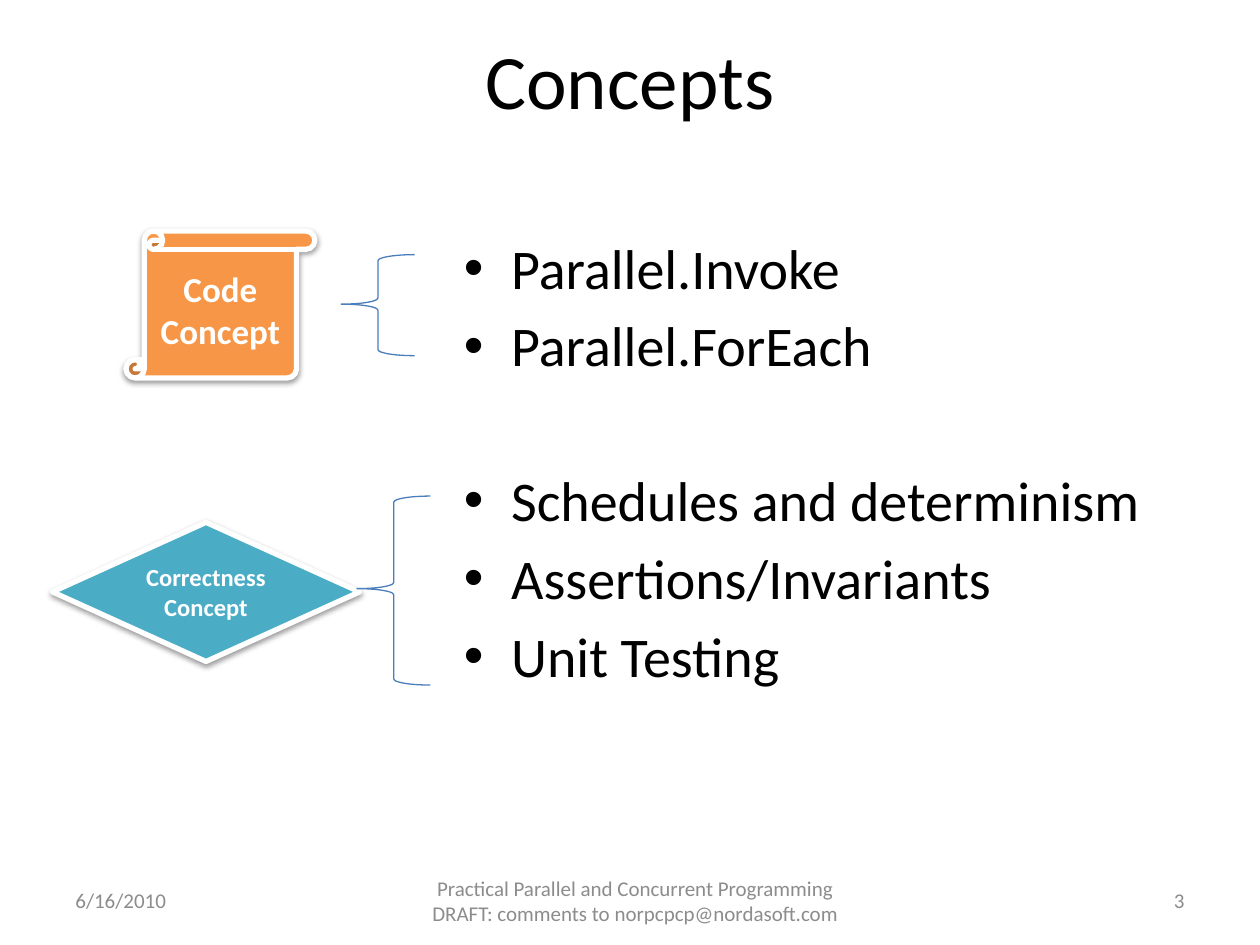
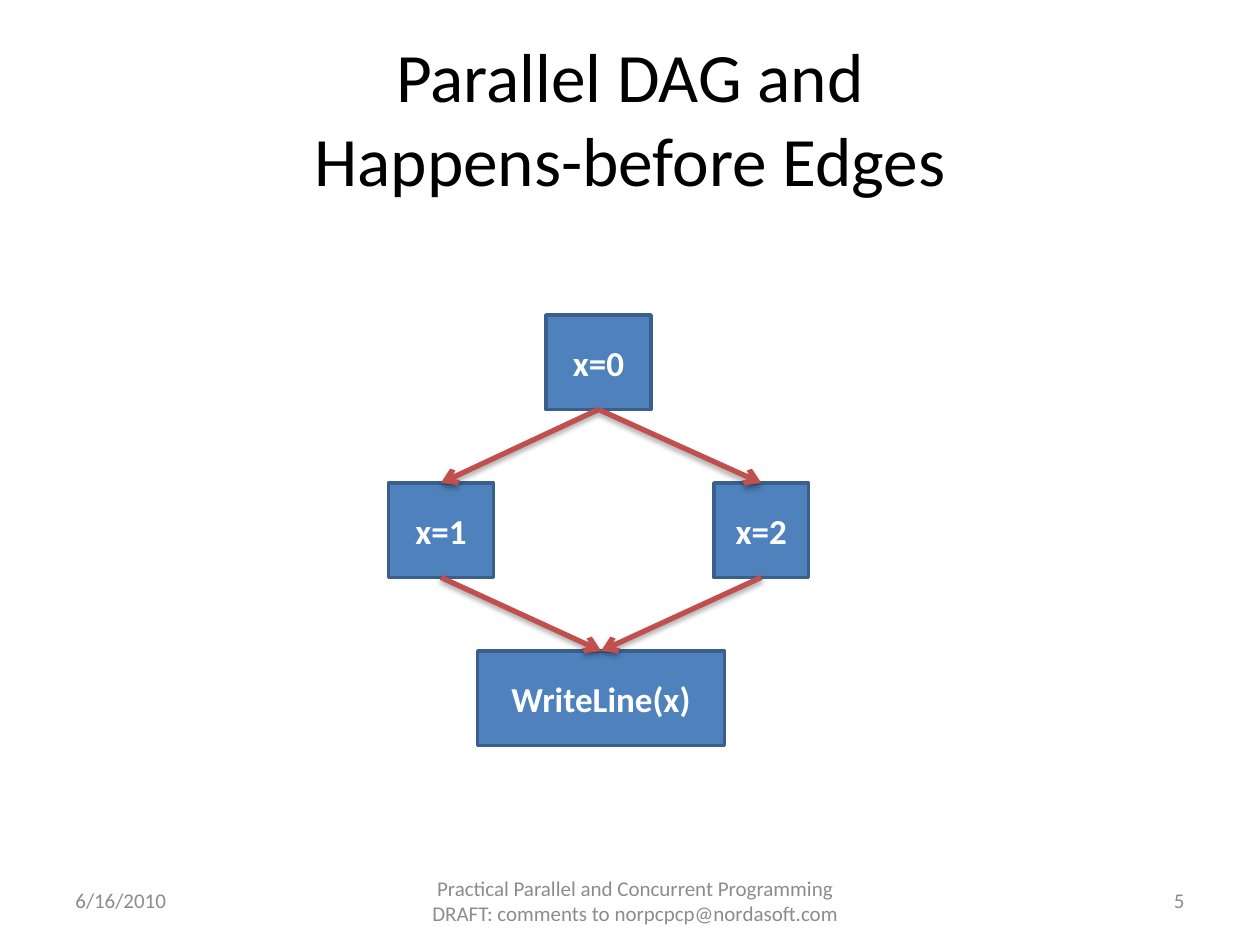
import pptx
import pptx.dml.color
import pptx.enum.shapes
import pptx.enum.text
import pptx.oxml
import pptx.oxml.ns
import pptx.util

PX = 9525  # EMU in one px, 96 px to the inch
SHAPE = pptx.enum.shapes.MSO_SHAPE
ALIGN = pptx.enum.text.PP_ALIGN
ANCHOR = pptx.enum.text.MSO_ANCHOR
NS = pptx.oxml.ns.nsdecls("a")

BLACK, WHITE, GREY = "000000", "FFFFFF", "8C8C8C"
ORANGE, TEAL, BLUE = "F79646", "4BACC6", "4F81BD"
BOX_EDGE, BRACE_LINE, ARROW_RED = "3A5F8C", "4B7EBC", "C0504D"


def rgb(value):
    return pptx.dml.color.RGBColor.from_string(value)


def write(sp, lines, size, color, align=ALIGN.CENTER, anchor=ANCHOR.MIDDLE, bold=False):
    """Fill sp with one paragraph per line and return the paragraphs."""
    tf = sp.text_frame
    tf.word_wrap = True
    tf.vertical_anchor = anchor
    tf.text = "\n".join(lines)
    font = {"name": "Calibri", "size": pptx.util.Pt(size), "bold": bold}
    for p in tf.paragraphs:
        p.alignment = align
        for r in p.runs:
            r.font.color.rgb = rgb(color)
            for key, value in font.items():
                setattr(r.font, key, value)
    return tf.paragraphs


prs = pptx.Presentation()
prs.slide_width, prs.slide_height = 960 * PX, 720 * PX

# Titles and footers
FOOTER = ("Practical Parallel and Concurrent Programming "
          "DRAFT: comments to norpcpcp@nordasoft.com")
pages = [
    ("Concepts", 0, 44, "3"),
    ("Parallel DAG and\vHappens-before Edges", 29, 39.6, "5"),
]
slides = []
for title, top, size, number in pages:
    s = prs.slides.add_slide(prs.slide_layouts[6])
    slides.append(s)
    sp = s.shapes.add_textbox(48 * PX, top * PX, 864 * PX, 120 * PX)
    write(sp, [title], size, BLACK)
    for text, left, width, align in [
        ("6/16/2010", 48, 224, ALIGN.LEFT),
        (FOOTER, 304, 360, ALIGN.CENTER),
        (number, 688, 224, ALIGN.RIGHT),
    ]:
        sp = s.shapes.add_textbox(left * PX, 667 * PX, width * PX, 38 * PX)
        write(sp, [text], 12, GREY, align)
concepts, dag = slides
shadowed = []  # (shape, shadow distance in EMU, opacity in percent)

# Concepts: bullet list, with a wider gap before the second group
bullets = [
    ("Parallel.Invoke", 2),
    ("Parallel.ForEach", 6),
    ("Schedules and determinism", 50),
    ("Assertions/Invariants", 6),
    ("Unit Testing", 6),
]
sp = concepts.shapes.add_textbox(344 * PX, 173 * PX, 616 * PX, 475 * PX)
paragraphs = write(sp, [text for text, _ in bullets], 32, BLACK, ALIGN.LEFT, ANCHOR.TOP)
for p, (_, gap) in zip(paragraphs, bullets):
    p.space_before = pptx.util.Pt(gap)
    pPr = p._p.get_or_add_pPr()
    pPr.set("marL", str(36 * PX))
    pPr.set("indent", str(-36 * PX))
    for xml in (f'<a:buFont {NS} typeface="Arial"/>', f'<a:buChar {NS} char="•"/>'):
        pPr.append(pptx.oxml.parse_xml(xml))

# Concepts: badges and the braces that tie them to the list
for kind, box, fill, lines, size in [
    (SHAPE.VERTICAL_SCROLL, (96, 176, 144, 112), ORANGE, ["Code", "Concept"], 20),
    (SHAPE.FLOWCHART_DECISION, (40, 398, 234, 106), TEAL, ["Correctness", "Concept"], 14),
]:
    sp = concepts.shapes.add_shape(kind, *[v * PX for v in box])
    sp.fill.solid()
    sp.fill.fore_color.rgb = rgb(fill)
    sp.line.color.rgb = rgb(WHITE)
    sp.line.width = pptx.util.Pt(3)
    write(sp, lines, size, WHITE, bold=True)
    shadowed.append((sp, 20000, 38))

for box in [(260, 194, 56, 77), (272, 378, 56, 144)]:
    sp = concepts.shapes.add_shape(SHAPE.LEFT_BRACE, *[v * PX for v in box])
    sp.adjustments[0], sp.adjustments[1] = 0.083, 0.49
    sp.fill.background()
    sp.line.color.rgb = rgb(BRACE_LINE)
    sp.line.width = pptx.util.Pt(0.75)
    sp.shadow.inherit = False

# DAG: nodes, then happens-before edges from bottom to top centres
nodes = {}
for text, left, top, width in [
    ("x=0", 416, 240, 80),
    ("x=1", 296, 368, 80),
    ("WriteLine(x)", 364, 496, 188),
    ("x=2", 544, 368, 72),
]:
    sp = dag.shapes.add_shape(SHAPE.RECTANGLE, left * PX, top * PX, width * PX, 72 * PX)
    sp.fill.solid()
    sp.fill.fore_color.rgb = rgb(BLUE)
    sp.line.color.rgb = rgb(BOX_EDGE)
    sp.line.width = pptx.util.Pt(2)
    sp.shadow.inherit = False
    write(sp, [text], 20, WHITE, bold=True)
    nodes[text] = sp

BOTTOM_SITE, TOP_SITE = 2, 0
for before, after in [("x=0", "x=1"), ("x=0", "x=2"),
                      ("x=1", "WriteLine(x)"), ("x=2", "WriteLine(x)")]:
    edge = dag.shapes.add_connector(pptx.enum.shapes.MSO_CONNECTOR.STRAIGHT, 0, 0, 0, 0)
    edge.begin_connect(nodes[before], BOTTOM_SITE)
    edge.end_connect(nodes[after], TOP_SITE)
    edge.line.color.rgb = rgb(ARROW_RED)
    edge.line.width = pptx.util.Pt(3)
    edge.line._get_or_add_ln().append(
        pptx.oxml.parse_xml(f'<a:tailEnd {NS} type="arrow"/>'))
    shadowed.append((edge, 23000, 35))

for sp, distance, opacity in shadowed:
    sp._element.spPr.append(pptx.oxml.parse_xml(
        f'<a:effectLst {NS}><a:outerShdw blurRad="40000" dist="{distance}" '
        f'dir="5400000" rotWithShape="0"><a:srgbClr val="{BLACK}">'
        f'<a:alpha val="{opacity * 1000}"/></a:srgbClr></a:outerShdw></a:effectLst>'))

prs.save("out.pptx")
